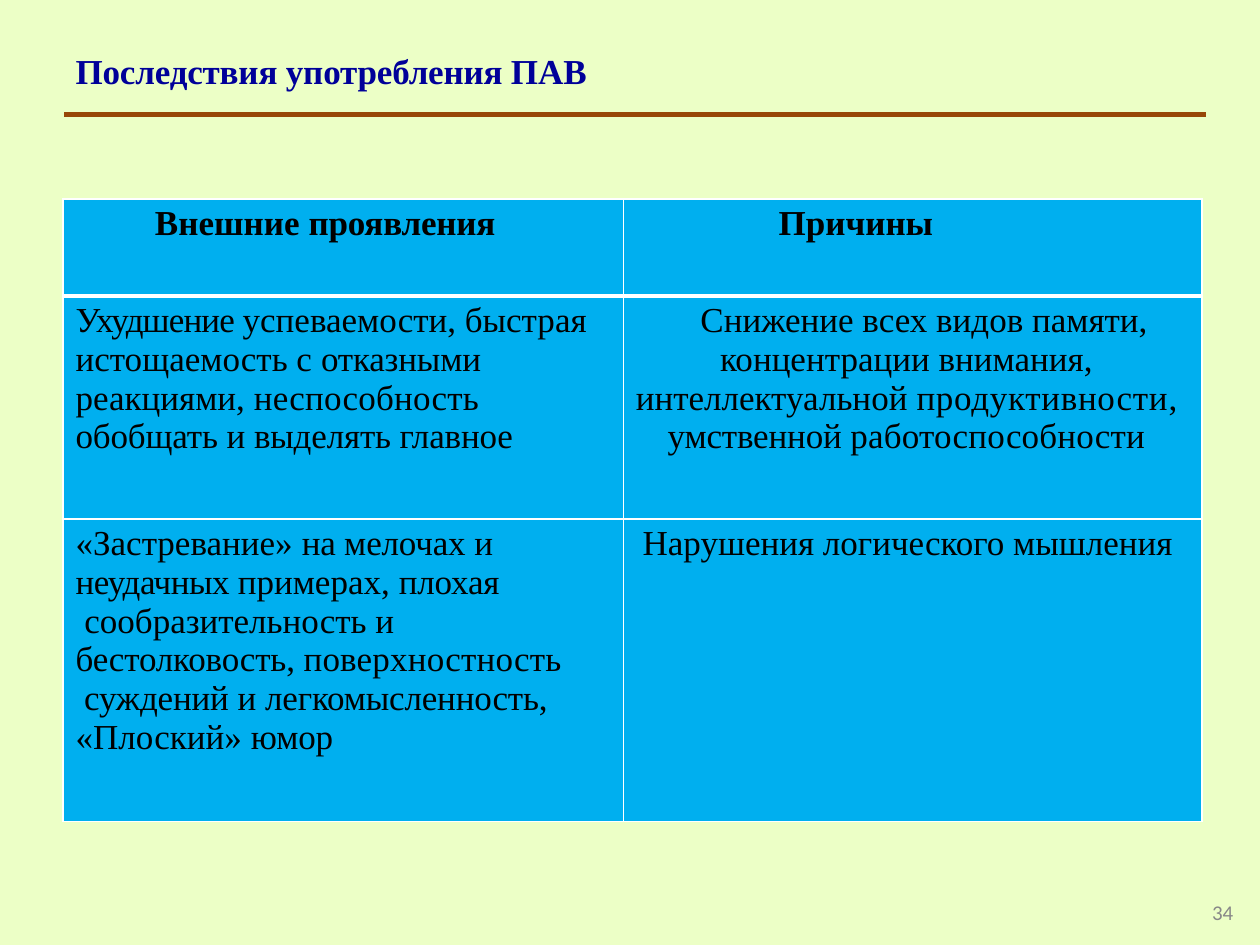
from lxml import etree
from pptx import Presentation
from pptx.dml.color import RGBColor
from pptx.enum.shapes import MSO_CONNECTOR
from pptx.enum.text import PP_ALIGN
from pptx.oxml.ns import qn
from pptx.util import Inches, Pt

LEFT, CENTER = PP_ALIGN.LEFT, PP_ALIGN.CENTER
SERIF, SANS = "Times New Roman", "Calibri"
BACKGROUND, NAVY, BROWN = "ECFFC6", "000099", "974707"
BLUE, WHITE, BLACK, GRAY = "00AFEF", "FFFFFF", "000000", "888888"

# Content: a run is (text, letter spacing in points), None is a line break
TITLE = [("Последствия употребления ", -0.1), ("ПАВ", 0)]
PAGE_NUMBER = [("34", 0)]

# Each cell is a list of paragraphs: (left indent, right indent, alignment, runs)
ROWS = [
    [
        [(0.73, 0, LEFT, [("Внешние ", 0), ("проявления", -0.1)])],
        [(1.23, 0, LEFT, [("Причины", 0)])],
    ],
    [
        [
            (0.1, 0, LEFT, [("Ухудшение ", -0.5), ("успеваемости, быстрая", 0)]),
            (0.1, 0, LEFT, [
                ("истощаемость с ", 0), ("отказными", -0.1), None,
                ("реакциями, ", 0), ("неспособность", 0.1), None,
                ("обобщать ", -0.1), ("и ", 0), ("выделять главное", -0.1)]),
        ],
        [
            (0.18, 0, CENTER, [("Снижение всех видов памяти,", 0)]),
            (0, 0.1, CENTER, [
                ("концентрации внимания,", 0), None,
                ("интеллектуальной ", 0), ("продуктивности", 0.4), (",", -0.1), None,
                ("умственной ", -0.1), ("работоспособности", 0.1)]),
        ],
    ],
    [
        [
            (0.1, 0, LEFT, [
                ("«Застревание» ", 0), ("на мелочах ", -0.1), ("и", 0), None,
                ("неудачных ", -0.3), ("примерах, ", 0), ("плохая", -0.1), None,
                (" сообразительность и", 0)]),
            (0.1, 0, LEFT, [
                ("бестолковость, ", -0.1), ("поверхностность", 0.1), None,
                (" суждений", -0.1), (" и ", 0), ("легкомысленность,", -0.1)]),
            (0.1, 0, LEFT, [("«Плоский» ", 0), ("юмор", -0.1)]),
        ],
        [(0.15, 0, LEFT, [("Нарушения логического мышления", 0)])],
    ],
]
COL_WIDTHS = [4.45, 4.59]
ROW_HEIGHTS = [0.77, 1.77, 2.4]


def color(value):
    return RGBColor.from_string(value)


def add_runs(p, runs, size, font, ink, bold=False):
    for run in runs:
        if run is None:
            p.add_line_break()
            continue
        r = p.add_run()
        r.text, spacing = run
        r.font.size, r.font.name, r.font.bold = Pt(size), font, bold
        r.font.color.rgb = color(ink)
        if spacing:
            r.font._element.set("spc", str(round(spacing * 100)))


def set_indent(p, left, right=0):
    pPr = p._p.get_or_add_pPr()
    pPr.set("marL", str(Inches(left)))
    pPr.set("marR", str(Inches(right)))


def add_text(s, left, top, width, height, inset_top=0):
    tf = s.shapes.add_textbox(
        Inches(left), Inches(top), Inches(width), Inches(height)).text_frame
    tf.word_wrap = True
    tf.margin_left = tf.margin_right = tf.margin_bottom = 0
    tf.margin_top = Inches(inset_top)
    return tf.paragraphs[0]


def set_border(cell, side, width):
    ln = etree.SubElement(cell._tc.get_or_add_tcPr(), qn(f"a:ln{side}"), w=str(Pt(width)))
    fill = etree.SubElement(ln, qn("a:solidFill"))
    etree.SubElement(fill, qn("a:srgbClr"), val=WHITE)


def fill_cell(cell, paragraphs, row):
    cell.margin_left = cell.margin_right = cell.margin_bottom = 0
    cell.margin_top = Inches(0.04)
    # The rule below the heading row is thicker than the others
    widths = {"L": 1, "R": 1, "T": 3 if row == 1 else 1, "B": 3 if row == 0 else 1}
    for side, width in widths.items():
        set_border(cell, side, width)
    cell.fill.solid()
    cell.fill.fore_color.rgb = color(BLUE)
    tf = cell.text_frame
    for i, (left, right, align, runs) in enumerate(paragraphs):
        p = tf.add_paragraph() if i else tf.paragraphs[0]
        p.alignment = align
        p.space_before = Pt(0 if i else 3)
        set_indent(p, left, right)
        add_runs(p, runs, 20, SERIF, BLACK, bold=row == 0)


prs = Presentation()
prs.slide_width, prs.slide_height = Inches(10), Inches(7.5)
s = prs.slides.add_slide(prs.slide_layouts[6])
s.background.fill.solid()
s.background.fill.fore_color.rgb = color(BACKGROUND)

# Rule under the title
rule = s.shapes.add_connector(
    MSO_CONNECTOR.STRAIGHT, Inches(0.51), Inches(0.91), Inches(9.57), Inches(0.91))
rule.line.color.rgb = color(BROWN)
rule.line.width = Pt(3)
etree.SubElement(rule._element.spPr, qn("a:effectLst"))

# Title
p = add_text(s, 0.59, 0.38, 4.3, 0.36, inset_top=0.01)
p.space_before = Pt(1)
set_indent(p, 0.01)
add_runs(p, TITLE, 20, SERIF, NAVY, bold=True)

# Page number
p = add_text(s, 9.58, 7.17, 0.25, 0.19)
p.line_spacing = Pt(12.4)
set_indent(p, 0.04)
add_runs(p, PAGE_NUMBER, 12, SANS, GRAY)

# Table of signs and causes
table = s.shapes.add_table(
    len(ROWS), len(COL_WIDTHS), Inches(0.5), Inches(1.58),
    Inches(sum(COL_WIDTHS)), Inches(sum(ROW_HEIGHTS))).table
for column, width in zip(table.columns, COL_WIDTHS):
    column.width = Inches(width)
for i, (height, cells) in enumerate(zip(ROW_HEIGHTS, ROWS)):
    table.rows[i].height = Inches(height)
    for j, paragraphs in enumerate(cells):
        fill_cell(table.cell(i, j), paragraphs, i)

prs.save("out.pptx")
